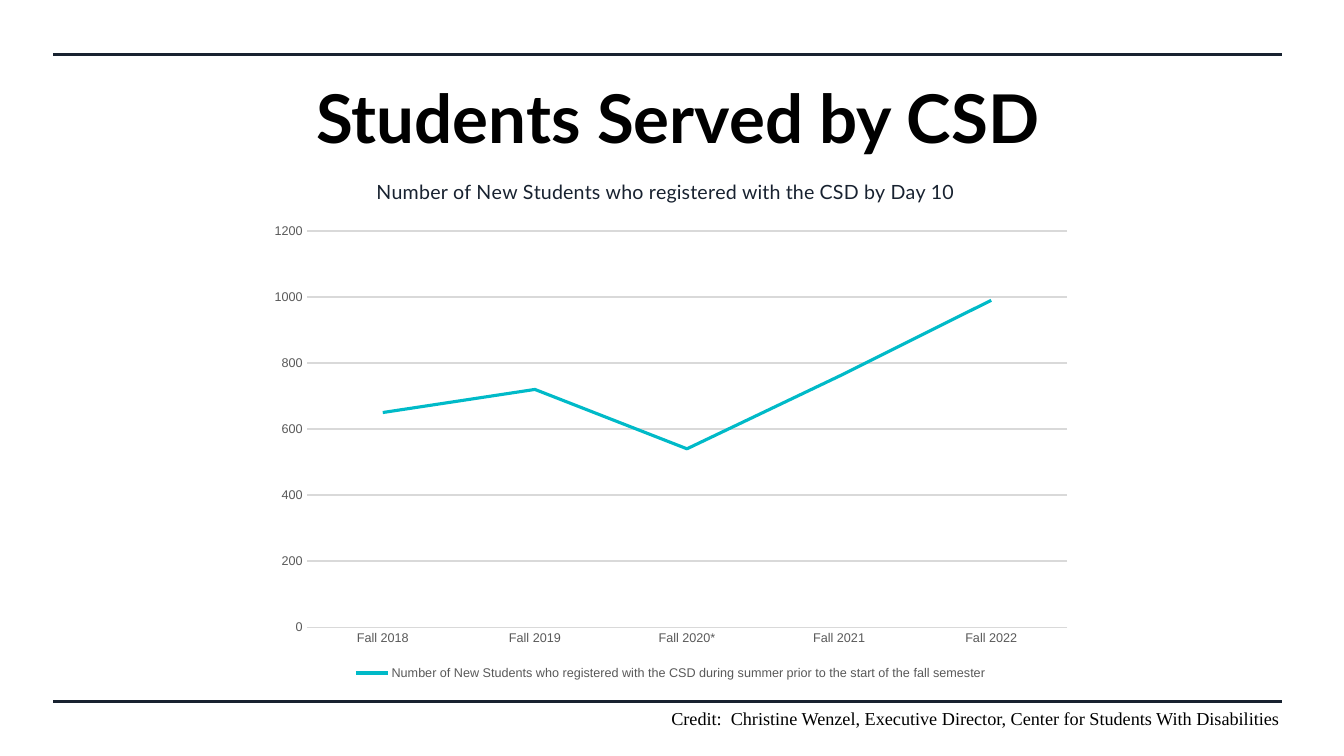
import pptx
import pptx.chart.data
import pptx.dml.color
import pptx.enum.chart
import pptx.enum.shapes
import pptx.enum.text
import pptx.oxml
import pptx.oxml.ns
import pptx.util
from lxml import etree

Inches = pptx.util.Inches
Pt = pptx.util.Pt
qn = pptx.oxml.ns.qn

HEADLINE = "Students Served by CSD"
CREDIT = "Credit:  Christine Wenzel, Executive Director, Center for Students With Disabilities"
CHART_TITLE = "Number of New Students who registered with the CSD by Day 10"
SERIES_NAME = ("Number of New Students who registered with the CSD during summer "
               "prior to the start of the fall semester")
REGISTRATIONS = {
    "Fall 2018": 650,
    "Fall 2019": 720,
    "Fall 2020*": 540,
    "Fall 2021": 760,
    "Fall 2022": 990,
}
RULE_LEFT, RULE_RIGHT = 0.53, 12.72
RULE_TOPS = (0.54, 6.96)
COLORS = {
    "black": "000000",
    "navy": "182230",
    "teal": "00BAC8",
    "grid": "D9D9D9",
    "label": "595959",
}


def rgb(name):
    return pptx.dml.color.RGBColor.from_string(COLORS[name])


def style_font(font, face, size, color, bold=False):
    font.name = face
    font.size = Pt(size)
    font.bold = bold
    font.color.rgb = rgb(color)


def style_line(line, color, width):
    line.color.rgb = rgb(color)
    line.width = Pt(width)


def place(element, index, **fractions):
    for old_layout in element.findall(qn("c:layout")):
        element.remove(old_layout)
    layout = etree.Element(qn("c:layout"))
    manual = etree.SubElement(layout, qn("c:manualLayout"))
    settings = {"xMode": "edge", "yMode": "edge", **fractions}
    if "w" in fractions:
        settings = {"layoutTarget": "inner", **settings}
    for tag, value in settings.items():
        etree.SubElement(manual, qn("c:" + tag)).set("val", str(value))
    element.insert(index, layout)


def add_rule(slide, top):
    rule = slide.shapes.add_connector(
        pptx.enum.shapes.MSO_CONNECTOR.STRAIGHT,
        Inches(RULE_LEFT), Inches(top), Inches(RULE_RIGHT), Inches(top))
    style_line(rule.line, "navy", 2.25)
    etree.SubElement(rule._element.spPr, qn("a:effectLst"))


def add_headline(slide):
    headline = slide.shapes.title
    headline.left, headline.top = Inches(3.04), Inches(0.71)
    headline.width, headline.height = Inches(8.5), Inches(0.91)
    frame = headline.text_frame
    frame.text = HEADLINE
    frame.word_wrap = True
    frame.vertical_anchor = pptx.enum.text.MSO_ANCHOR.BOTTOM
    paragraph = frame.paragraphs[0]
    paragraph.alignment = pptx.enum.text.PP_ALIGN.LEFT
    paragraph.line_spacing = 0.9
    style_font(paragraph.runs[0].font, "Lato", 48, "black", True)


def add_registrations(slide):
    data = pptx.chart.data.CategoryChartData()
    data.categories = list(REGISTRATIONS)
    data.add_series(SERIES_NAME, list(REGISTRATIONS.values()))
    chart = slide.shapes.add_chart(
        pptx.enum.chart.XL_CHART_TYPE.LINE,
        Inches(2.55), Inches(1.62), Inches(8.2), Inches(5.17), data).chart
    style_font(chart.font, "Arial", 10, "black")

    chart.has_title = True
    title = chart.chart_title
    title.text_frame.text = CHART_TITLE
    style_font(title.text_frame.paragraphs[0].runs[0].font, "Lato", 14, "navy")
    title.include_in_layout = False
    place(title._element, 1, x=0.14, y=0.02)
    place(chart._chartSpace.chart.plotArea, 0, x=0.06, y=0.13, w=0.92, h=0.76)

    chart.has_legend = True
    chart.legend.position = pptx.enum.chart.XL_LEGEND_POSITION.BOTTOM
    chart.legend.include_in_layout = False
    style_font(chart.legend.font, "Arial", 9, "label")

    for axis in (chart.category_axis, chart.value_axis):
        axis.major_tick_mark = pptx.enum.chart.XL_TICK_MARK.NONE
        axis.minor_tick_mark = pptx.enum.chart.XL_TICK_MARK.NONE
        style_font(axis.tick_labels.font, "Arial", 9, "label")
    style_line(chart.category_axis.format.line, "grid", 0.75)
    counts = chart.value_axis
    counts.minimum_scale, counts.maximum_scale, counts.major_unit = 0, 1200, 200
    counts.format.line.fill.background()
    counts.has_major_gridlines = True
    style_line(counts.major_gridlines.format.line, "grid", 0.75)

    chart.plots[0].vary_by_categories = False
    students = chart.plots[0].series[0]
    students.smooth = False
    students.marker.style = pptx.enum.chart.XL_MARKER_STYLE.NONE
    style_line(students.format.line, "teal", 2.25)


def add_credit(slide):
    credit = slide.shapes.add_textbox(Inches(6.56), Inches(6.97), Inches(6.67), Inches(0.32))
    credit.text_frame.text = CREDIT
    credit.text_frame.word_wrap = True
    style_font(credit.text_frame.paragraphs[0].runs[0].font, "Times New Roman", 13, "black")


def main():
    deck = pptx.Presentation()
    deck.slide_width, deck.slide_height = Inches(13.33), Inches(7.5)
    slide = deck.slides.add_slide(deck.slide_layouts[5])
    for top in RULE_TOPS:
        add_rule(slide, top)
    add_headline(slide)
    add_registrations(slide)
    add_credit(slide)
    deck.save("out.pptx")


if __name__ == "__main__":
    main()
